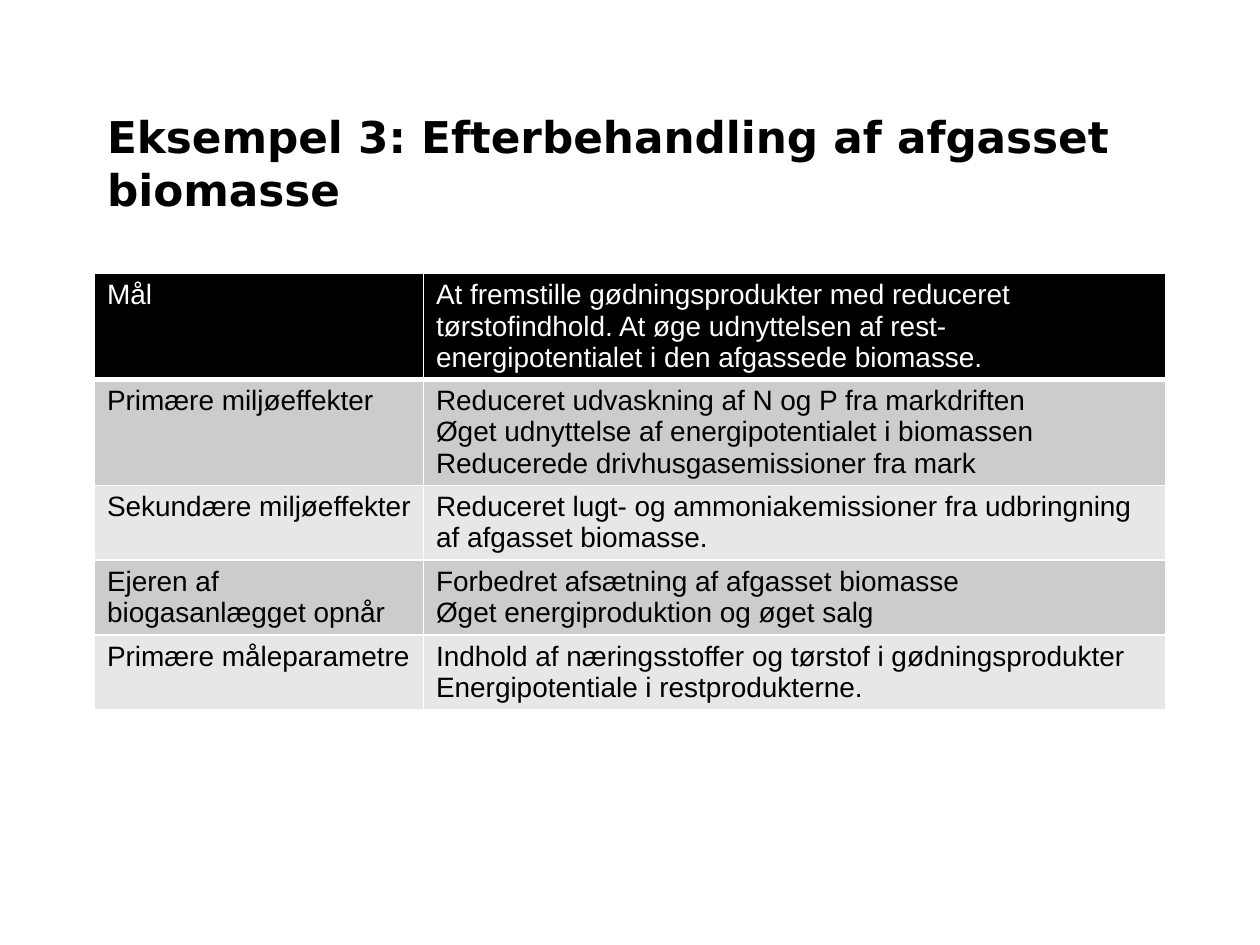
from dataclasses import dataclass

from lxml.etree import SubElement
from pptx import Presentation
from pptx.dml.color import RGBColor
from pptx.enum.text import MSO_ANCHOR, PP_ALIGN
from pptx.oxml.ns import qn
from pptx.slide import Slide
from pptx.table import _Cell
from pptx.text.text import TextFrame
from pptx.util import Pt

COLORS = {
    "black": "000000",
    "white": "FFFFFF",
    "dark_band": "CCCCCC",
    "light_band": "E7E7E7",
}
TABLE_LEFT, TABLE_TOP = 54, 156.25
COLUMN_WIDTHS = (188, 424)
ROW_HEIGHT = 29.5


@dataclass
class Row:
    label: str
    lines: list[str]


ROWS = [
    Row("Mål", [
        "At fremstille gødningsprodukter med reduceret tørstofindhold. "
        "At øge udnyttelsen af rest-energipotentialet i den afgassede biomasse.",
    ]),
    Row("Primære miljøeffekter", [
        "Reduceret udvaskning af N og P fra markdriften",
        "Øget udnyttelse af energipotentialet i biomassen",
        "Reducerede drivhusgasemissioner fra mark",
    ]),
    Row("Sekundære miljøeffekter", [
        "Reduceret lugt- og ammoniakemissioner fra udbringning af afgasset biomasse.",
    ]),
    Row("Ejeren af biogasanlægget opnår", [
        "Forbedret afsætning af afgasset biomasse",
        "Øget energiproduktion og øget salg",
    ]),
    Row("Primære måleparametre", [
        "Indhold af næringsstoffer og tørstof i gødningsprodukter",
        "Energipotentiale i restprodukterne.",
    ]),
]


def write_text(frame: TextFrame, lines: list[str], *, size: float, font: str,
               color: str, bold: bool = False) -> None:
    """Write one left-aligned paragraph per line."""
    for index, line in enumerate(lines):
        para = frame.add_paragraph() if index else frame.paragraphs[0]
        para.alignment = PP_ALIGN.LEFT
        span = para.add_run()
        span.text = line
        span.font.size = Pt(size)
        span.font.name = font
        span.font.bold = bold
        span.font.color.rgb = RGBColor.from_string(COLORS[color])


def set_borders(cell: _Cell, *, color: str, bottom: float = 1) -> None:
    """Line all four sides of a cell; call before the fill is set."""
    properties = cell._tc.get_or_add_tcPr()
    for side, width in (("L", 1), ("R", 1), ("T", 1), ("B", bottom)):
        line = SubElement(properties, qn(f"a:ln{side}"), w=str(Pt(width)))
        fill = SubElement(line, qn("a:solidFill"))
        SubElement(fill, qn("a:srgbClr"), val=COLORS[color])


def add_title(page: Slide, text: str) -> None:
    title = page.shapes.title
    title.left, title.top, title.width, title.height = Pt(54), Pt(48), Pt(612), Pt(90)
    title.text_frame.vertical_anchor = MSO_ANCHOR.MIDDLE
    write_text(title.text_frame, [text], size=25, font="DejaVu Sans",
               color="black", bold=True)


def add_effects_table(page: Slide, rows: list[Row]) -> None:
    frame = page.shapes.add_table(
        len(rows), len(COLUMN_WIDTHS), Pt(TABLE_LEFT), Pt(TABLE_TOP),
        Pt(sum(COLUMN_WIDTHS)), Pt(ROW_HEIGHT * len(rows)))
    table = frame.table
    for column, width in zip(table.columns, COLUMN_WIDTHS):
        column.width = Pt(width)
    for index, row in enumerate(rows):
        table.rows[index].height = Pt(ROW_HEIGHT)
        header = index == 0
        band = "black" if header else "dark_band" if index % 2 else "light_band"
        for cell, lines in zip(table.rows[index].cells, ([row.label], row.lines)):
            set_borders(cell, color="white", bottom=3 if header else 1)
            cell.fill.solid()
            cell.fill.fore_color.rgb = RGBColor.from_string(COLORS[band])
            write_text(cell.text_frame, lines, size=16, font="Arial",
                       color="white" if header else "black")


def main() -> None:
    deck = Presentation()
    deck.slide_width, deck.slide_height = Pt(720), Pt(540)
    page = deck.slides.add_slide(deck.slide_layouts[5])

    # Heading
    add_title(page, "Eksempel 3: Efterbehandling af afgasset biomasse")

    # Goals, effects and measured parameters
    add_effects_table(page, ROWS)

    deck.save("out.pptx")


if __name__ == "__main__":
    main()
